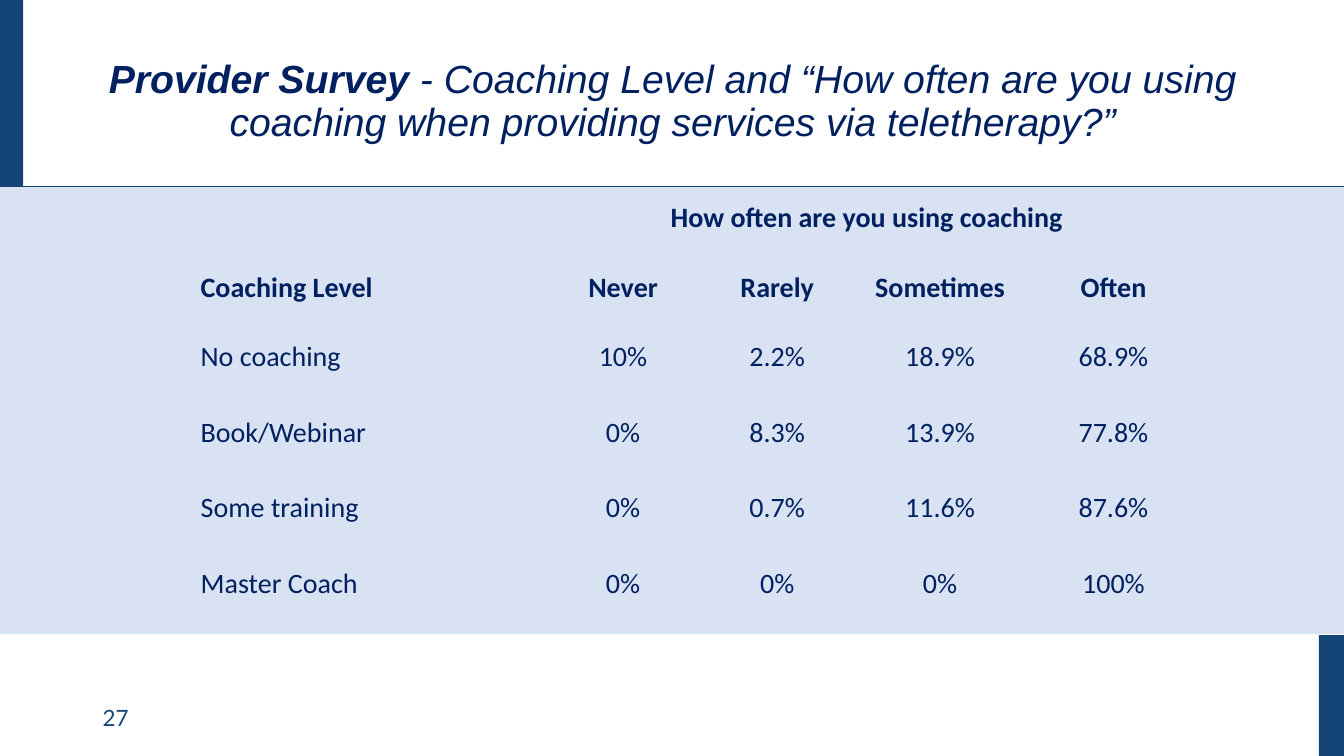
from dataclasses import dataclass

import pptx
import pptx.dml.color
import pptx.enum.shapes
import pptx.enum.text
import pptx.oxml.ns
import pptx.util
from lxml import etree

ALIGN = pptx.enum.text.PP_ALIGN
ANCHOR = pptx.enum.text.MSO_ANCHOR
WIDTH, HEIGHT = pptx.util.Inches(13.33), pptx.util.Inches(7.5)
NO_STYLE_NO_GRID = "{2D5ABB26-0587-4C30-8999-92F81FD0307C}"


@dataclass(frozen=True)
class Theme:
    ink: str = "002060"
    accent: str = "154578"
    band: str = "D8E2F3"
    title_font: str = "Arial"
    body_font: str = "Calibri"
    number_font: str = "Lato"
    title_size: int = 28
    body_size: int = 20
    number_size: int = 16


THEME = Theme()

# Shares of the slide in percent
BAND_TOP, BAND_HEIGHT = 24.67, 59.2
BAR_WIDTH = 1.88
TEXT_LEFT = 6.9
TABLE_LEFT, TABLE_TOP = 14.18, 32.53
COLUMN_WIDTHS = [25.88, 12.6, 10.35, 13.88, 11.93]
ROW_HEIGHTS = [10.4] + [10] * 4

SURVEY = [
    ["Coaching Level", "Never", "Rarely", "Sometimes", "Often"],
    ["No coaching", "10%", "2.2%", "18.9%", "68.9%"],
    ["Book/Webinar", "0%", "8.3%", "13.9%", "77.8%"],
    ["Some training", "0%", "0.7%", "11.6%", "87.6%"],
    ["Master Coach", "0%", "0%", "0%", "100%"],
]


def across(share):
    return round(WIDTH * share / 100)


def down(share):
    return round(HEIGHT * share / 100)


def area(left, top, width, height):
    return across(left), down(top), across(width), down(height)


def rgb(color):
    return pptx.dml.color.RGBColor.from_string(color)


def add_run(paragraph, text, font, size, color, bold=False, italic=False):
    run = paragraph.add_run()
    run.text = text
    run.font.name, run.font.size = font, pptx.util.Pt(size)
    run.font.color.rgb = rgb(color)
    run.font.bold, run.font.italic = bold, italic


def add_body_run(paragraph, text, align, bold):
    paragraph.alignment, paragraph.line_spacing = align, 1.15
    add_run(paragraph, text, THEME.body_font, THEME.body_size, THEME.ink, bold)


def add_block(slide, color, *shares):
    block = slide.shapes.add_shape(
        pptx.enum.shapes.MSO_SHAPE.RECTANGLE, *area(*shares))
    block.shadow.inherit = False
    block.fill.solid()
    block.fill.fore_color.rgb = rgb(color)
    block.line.fill.background()


def add_rule(slide, top):
    rule = slide.shapes.add_connector(
        pptx.enum.shapes.MSO_CONNECTOR.STRAIGHT, 0, down(top), WIDTH, down(top))
    rule.line.color.rgb = rgb(THEME.accent)
    rule.line.width = pptx.util.Pt(0.75)
    etree.SubElement(rule.element.spPr, pptx.oxml.ns.qn("a:effectLst"))


def add_label(slide, anchor, *shares):
    frame = slide.shapes.add_textbox(*area(*shares)).text_frame
    frame.word_wrap, frame.vertical_anchor = True, anchor
    return frame.paragraphs[0]


def fill_title(slide):
    title = slide.shapes.title
    title.left, title.top, title.width, title.height = area(
        TEXT_LEFT, 3.87, 86.27, 19.33)
    title.text_frame.word_wrap = True
    title.text_frame.auto_size = pptx.enum.text.MSO_AUTO_SIZE.NONE
    title.text_frame.vertical_anchor = ANCHOR.MIDDLE
    heading = title.text_frame.paragraphs[0]
    heading.alignment, heading.line_spacing = ALIGN.CENTER, 0.9
    look = THEME.title_font, THEME.title_size, THEME.ink
    add_run(heading, "Provider Survey", *look, bold=True, italic=True)
    add_run(heading, " - Coaching Level and “How often are you using coaching "
            "when providing services via teletherapy?”", *look, italic=True)


def add_survey_table(slide):
    frame = slide.shapes.add_table(
        len(SURVEY), len(COLUMN_WIDTHS),
        *area(TABLE_LEFT, TABLE_TOP, sum(COLUMN_WIDTHS), sum(ROW_HEIGHTS)))
    for style in frame.element.iter(pptx.oxml.ns.qn("a:tableStyleId")):
        style.text = NO_STYLE_NO_GRID
    survey = frame.table
    survey.first_row = survey.horz_banding = False
    for column, share in zip(survey.columns, COLUMN_WIDTHS):
        column.width = across(share)
    for row, share in zip(survey.rows, ROW_HEIGHTS):
        row.height = down(share)
    for r, answers in enumerate(SURVEY):
        for c, answer in enumerate(answers):
            cell = survey.cell(r, c)
            cell.fill.background()
            cell.margin_left = cell.margin_right = pptx.util.Inches(0.1)
            cell.margin_top = cell.margin_bottom = pptx.util.Inches(0.1)
            cell.vertical_anchor = ANCHOR.TOP if r else ANCHOR.MIDDLE
            add_body_run(cell.text_frame.paragraphs[0], answer,
                         ALIGN.CENTER if c else ALIGN.LEFT, bold=r == 0)


def main():
    deck = pptx.Presentation()
    deck.slide_width, deck.slide_height = WIDTH, HEIGHT
    slide = deck.slides.add_slide(deck.slide_layouts.get_by_name("Title Only"))

    # Page number and background
    page_number = add_label(slide, ANCHOR.MIDDLE, TEXT_LEFT, 92.27, 22.5, 5.33)
    add_run(page_number, "27", THEME.number_font, THEME.number_size, THEME.accent)
    add_block(slide, THEME.band, 0, BAND_TOP, 100, BAND_HEIGHT)
    add_block(slide, THEME.accent, 0, 0, 1.73, BAND_TOP)
    add_block(slide, THEME.accent, 100 - BAR_WIDTH, 84, BAR_WIDTH, 16)
    add_rule(slide, BAND_TOP)

    # Title and survey results
    fill_title(slide)
    question = add_label(slide, ANCHOR.TOP, 40.21, 25.07, 48.54, 6.27)
    add_body_run(question, "How often are you using coaching", ALIGN.CENTER, True)
    add_survey_table(slide)

    deck.save("out.pptx")


if __name__ == "__main__":
    main()
